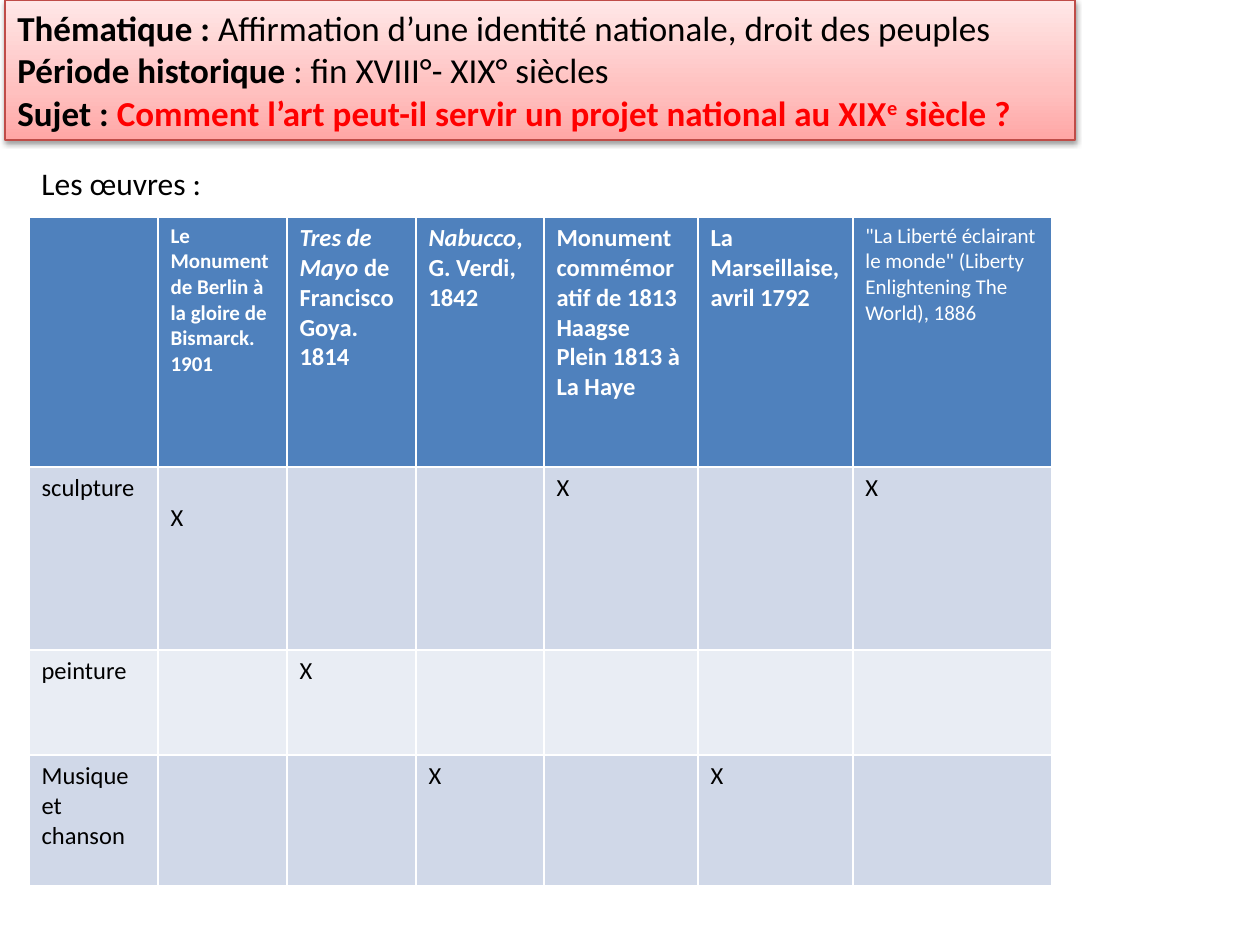
from pptx import Presentation
from pptx.dml.color import RGBColor
from pptx.enum.shapes import MSO_SHAPE
from pptx.enum.text import MSO_ANCHOR, PP_ALIGN
from pptx.oxml import parse_xml
from pptx.oxml.ns import nsdecls
from pptx.util import Emu, Pt

PX = 914400 / 126
BLACK = RGBColor(0x00, 0x00, 0x00)
WHITE = RGBColor(0xFF, 0xFF, 0xFF)
RED = RGBColor(0xFF, 0x00, 0x00)
BRICK = RGBColor(0xBF, 0x4C, 0x48)
BLUE = RGBColor(0x4F, 0x81, 0xBD)
BAND_DARK = RGBColor(0xD0, 0xD8, 0xE8)
BAND_LIGHT = RGBColor(0xE9, 0xED, 0xF4)
PINKS = [(0, RGBColor(0xFF, 0xA6, 0xA5)),
         (35, RGBColor(0xFF, 0xC0, 0xBF)),
         (100, RGBColor(0xFF, 0xE7, 0xE7))]

BOLD = {"bold": True}
ITALIC = {"bold": True, "italic": True}
SMALL = {"size": Pt(12)}
QUESTION = {"bold": True, "color": RED}

SUBJECT = [
    [("Thématique :", BOLD),
     (" Affirmation d’une identité nationale, droit des peuples", {})],
    [("Période historique", BOLD), (" : fin XVIII°- XIX° siècles", {})],
    [("Sujet : ", BOLD),
     ("Comment l’art peut-il servir un projet national au XIX", QUESTION),
     ("e", QUESTION | {"baseline": 30}),
     (" siècle ?", QUESTION)],
]
WORKS = [
    [],
    [("Le Monument de Berlin à la gloire de Bismarck. 1901", BOLD | SMALL)],
    [("Tres de Mayo ", ITALIC), ("de Francisco Goya. 1814", BOLD)],
    [("Nabucco", ITALIC), (", G. Verdi, 1842", BOLD)],
    [("Monument commémoratif de 1813 Haagse Plein 1813 à La Haye", BOLD)],
    [("La Marseillaise, avril 1792", BOLD)],
    [('"La Liberté éclairant le monde" (Liberty Enlightening The World), 1886',
      SMALL)],
]
# Art form and the columns of the works that belong to it
ARTS = [("sculpture", {1, 4, 6}), ("peinture", {2}), ("Musique et chanson", {3, 5})]
COL_WIDTHS = [129, 129, 129, 128, 154, 155, 199]
ROW_HEIGHTS = [250, 183, 105, 131]


def px(n):
    return Emu(round(n * PX))


class SlideBuilder:
    def __init__(self, slide, font="Calibri"):
        self.slide = slide
        self.font = font

    def put_text(self, tf, paragraphs, size, color=BLACK):
        """Fill a text frame with paragraphs, each a list of (text, format)."""
        tf.word_wrap = True
        for i, runs in enumerate(paragraphs):
            p = tf.paragraphs[0] if i == 0 else tf.add_paragraph()
            p.alignment = PP_ALIGN.LEFT
            for text, fmt in runs:
                r = p.add_run()
                r.text = text
                values = {"name": self.font, "size": size, "color": color} | fmt
                for key, value in values.items():
                    if key == "color":
                        r.font.color.rgb = value
                    elif key == "baseline":
                        r._r.get_or_add_rPr().set("baseline", str(value * 1000))
                    else:
                        setattr(r.font, key, value)

    def banner(self, box, paragraphs, size, stops):
        """Rectangle with an upward gradient and a soft shadow below."""
        sp = self.slide.shapes.add_shape(MSO_SHAPE.RECTANGLE, *map(px, box))
        sp.line.color.rgb = BRICK
        sp.line.width = Pt(0.75)
        marks = "".join(f'<a:gs pos="{pos * 1000}"><a:srgbClr val="{color}"/></a:gs>'
                        for pos, color in stops)
        sp._element.spPr.find("{*}prstGeom").addnext(parse_xml(
            f'<a:gradFill {nsdecls("a")} rotWithShape="1"><a:gsLst>{marks}</a:gsLst>'
            '<a:lin ang="16200000" scaled="1"/></a:gradFill>'))
        sp._element.spPr.append(parse_xml(
            f'<a:effectLst {nsdecls("a")}><a:outerShdw blurRad="40000" dist="20000" '
            'dir="5400000" rotWithShape="0"><a:srgbClr val="000000">'
            '<a:alpha val="38000"/></a:srgbClr></a:outerShdw></a:effectLst>'))
        sp.text_frame.vertical_anchor = MSO_ANCHOR.MIDDLE
        self.put_text(sp.text_frame, paragraphs, size)

    def label(self, box, text, size):
        sp = self.slide.shapes.add_textbox(*map(px, box))
        self.put_text(sp.text_frame, [[(text, {})]], size)

    def cell(self, cell, runs, fill, color):
        tcPr = cell._tc.get_or_add_tcPr()
        for side in ("lnL", "lnR", "lnT", "lnB"):
            tcPr.append(parse_xml(
                f'<a:{side} {nsdecls("a")} w="12700"><a:solidFill>'
                f'<a:srgbClr val="{WHITE}"/></a:solidFill></a:{side}>'))
        cell.fill.solid()
        cell.fill.fore_color.rgb = fill
        self.put_text(cell.text_frame, [runs], Pt(14), color)

    def table(self, left, top, widths, heights, rows):
        """Draw rows given as (runs of each cell, fill, text colour)."""
        box = left, top, sum(widths), sum(heights)
        table = self.slide.shapes.add_table(
            len(heights), len(widths), *map(px, box)).table
        table.first_row = table.horz_banding = False
        for col, width in zip(table.columns, widths):
            col.width = px(width)
        for row, height, (cells, fill, color) in zip(table.rows, heights, rows):
            row.height = px(height)
            for cell, runs in zip(row.cells, cells):
                self.cell(cell, runs, fill, color)
        return table


def main():
    prs = Presentation()
    prs.slide_width, prs.slide_height = px(1260), px(945)
    s = SlideBuilder(prs.slides.add_slide(prs.slide_layouts[6]))

    s.banner((5, 0, 1070, 140), SUBJECT, Pt(20), PINKS)
    s.label((29, 158, 286, 89), "Les œuvres :", Pt(18))

    rows = [(WORKS, BLUE, WHITE)]
    for i, (art, columns) in enumerate(ARTS):
        marks = [[("X", {})] if col in columns else []
                 for col in range(1, len(WORKS))]
        rows.append(([[(art, {})]] + marks, (BAND_DARK, BAND_LIGHT)[i % 2], BLACK))
    table = s.table(29, 217, COL_WIDTHS, ROW_HEIGHTS, rows)
    table.cell(1, 1).margin_top = px(36)  # this mark sits one line lower

    prs.save("out.pptx")


if __name__ == "__main__":
    main()
